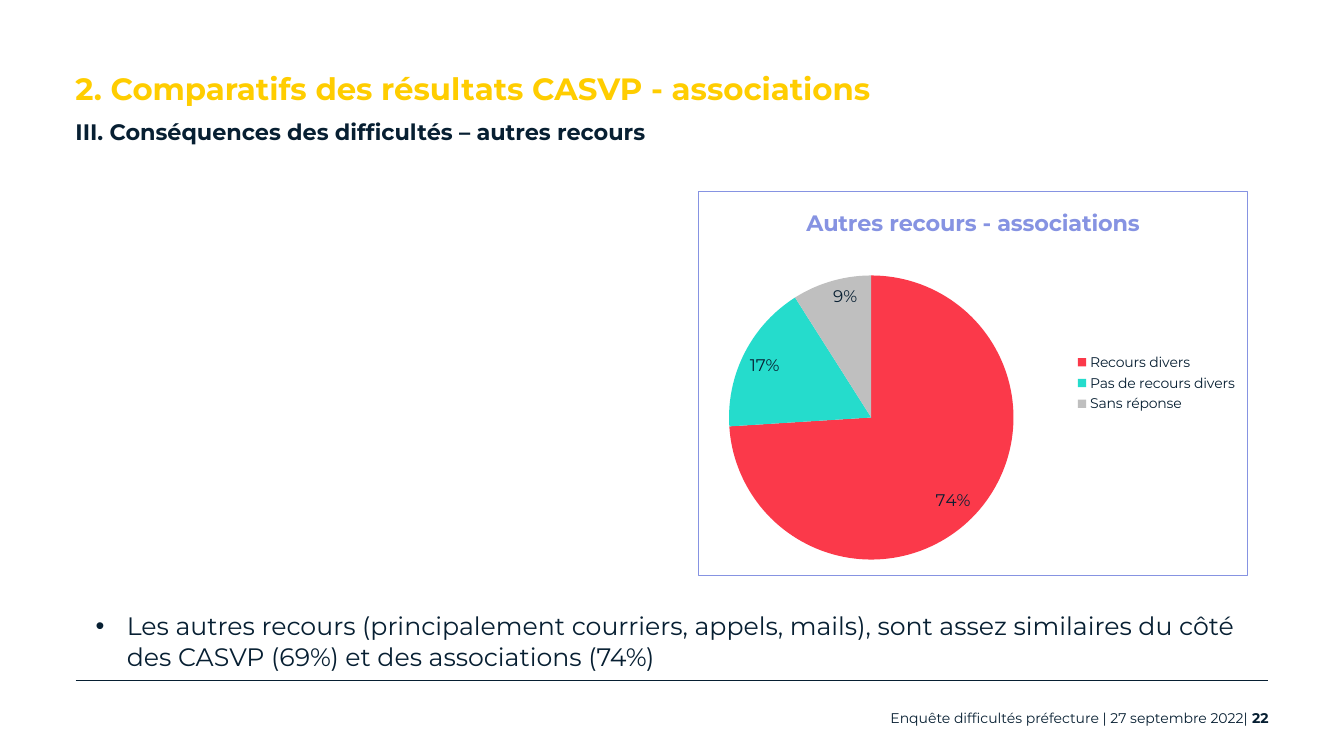
from lxml import etree
from pptx import Presentation
from pptx import util as u
from pptx.chart.data import CategoryChartData
from pptx.dml.color import RGBColor
from pptx.enum import chart as ch, shapes, text
from pptx.oxml import parse_xml
from pptx.oxml.ns import nsdecls, qn

Inches = u.Inches
FONT = "Montserrat"
HUES = {"ink": "071F32", "gold": "FFCD00", "lilac": "8693E2",
        "red": "FB394A", "teal": "25DCCC", "grey": "BFBFBF"}

deck = Presentation()
deck.slide_width, deck.slide_height = Inches(13.33), Inches(7.5)
slide = deck.slides.add_slide(deck.slide_layouts[6])


def style(font, size, hue="ink", bold=False):
    font.name, font.size, font.bold = FONT, u.Pt(size), bold
    font.color.rgb = RGBColor.from_string(HUES[hue])


def write(words, at, size, hue="ink", bold=False, align="LEFT",
          anchor="TOP", space=1.0, bullet=None):
    frame = slide.shapes.add_textbox(*map(Inches, at)).text_frame
    frame.word_wrap = True
    frame.vertical_anchor = text.MSO_ANCHOR[anchor]
    para = frame.paragraphs[0]
    para.alignment = text.PP_ALIGN[align]
    para.line_spacing = space
    if bullet:
        props = para._p.get_or_add_pPr()
        props.set("marL", str(Inches(0.31)))
        props.set("indent", str(-Inches(0.31)))
        etree.SubElement(props, qn("a:buFont")).set("typeface", "Arial")
        etree.SubElement(props, qn("a:buChar")).set("char", bullet)
    run = para.add_run()
    run.text = words
    style(run.font, size, hue, bold)


# Headings
write("2. Comparatifs des résultats CASVP - associations",
      (0.65, 0.59, 11.81, 0.51), 22, hue="gold", bold=True, space=1.15)
write("III. Conséquences des difficultés – autres recours",
      (0.65, 1.08, 11.81, 0.41), 16, bold=True, anchor="BOTTOM", space=1.3)

# Pie chart
data = CategoryChartData(number_format="0%")
data.categories = ["Recours divers", "Pas de recours divers", "Sans réponse"]
data.add_series("Autres recours", (0.74, 0.17, 0.09))
pie = slide.shapes.add_chart(
    ch.XL_CHART_TYPE.PIE, Inches(6.92), Inches(1.89),
    Inches(5.46), Inches(3.82), data).chart
style(pie.font, 10)
pie.has_title = True
pie.chart_title.include_in_layout = False
head = pie.chart_title.text_frame
head.text = "Autres recours - associations"
style(head.paragraphs[0].runs[0].font, 16, "lilac", True)
pie.has_legend = True
pie.legend.position = ch.XL_LEGEND_POSITION.RIGHT
pie.legend.include_in_layout = False
style(pie.legend.font, 10)

# Slices and their labels
plot = pie.plots[0]
plot.vary_by_categories = True
for i, hue in enumerate(("red", "teal", "grey")):
    fill = plot.series[0].points[i].format.fill
    fill.solid()
    fill.fore_color.rgb = RGBColor.from_string(HUES[hue])
plot.has_data_labels = True
tags = plot.data_labels
tags.show_value, tags.show_percentage = True, False
tags.number_format, tags.number_format_is_linked = "0%", False
tags.position = ch.XL_LABEL_POSITION.INSIDE_END
style(tags.font, 12)

# Chart border and plot position
root = pie._chartSpace
root.find(qn("c:chart")).addnext(parse_xml(
    f'<c:spPr {nsdecls("c", "a")}><a:noFill/><a:ln w="{u.Pt(0.75)}"><a:solidFill>'
    f'<a:srgbClr val="{HUES["lilac"]}"/></a:solidFill></a:ln></c:spPr>'))
area = root.find(".//" + qn("c:plotArea"))
for old in area.findall(qn("c:layout")):
    area.remove(old)
layout = parse_xml(f'<c:layout {nsdecls("c")}><c:manualLayout/></c:layout>')
area.insert(0, layout)
for tag, val in (("layoutTarget", "inner"), ("xMode", "edge"), ("yMode", "edge"),
                 ("x", "0.05"), ("y", "0.22"), ("w", "0.53"), ("h", "0.74")):
    etree.SubElement(layout[0], qn("c:" + tag)).set("val", val)

# Finding
write("Les autres recours (principalement courriers, appels, mails), sont assez "
      "similaires du côté des CASVP (69%) et des associations (74%)",
      (0.85, 6.01, 11.72, 0.71), 18, bullet="•")

# Footer
rule = slide.shapes.add_connector(
    shapes.MSO_CONNECTOR.STRAIGHT,
    Inches(0.75), Inches(6.75), Inches(12.58), Inches(6.75))
rule.line.width = u.Pt(0.65)
rule.line.color.rgb = RGBColor.from_string(HUES["ink"])
etree.SubElement(rule._element.spPr, qn("a:effectLst"))
foot = dict(align="RIGHT", anchor="MIDDLE", space=1.15)
write("Enquête difficultés préfecture | 27 septembre 2022|",
      (5.78, 6.97, 6.69, 0.28), 10, **foot)
write("22", (12.09, 6.97, 0.59, 0.28), 10, bold=True, **foot)

deck.save("out.pptx")
